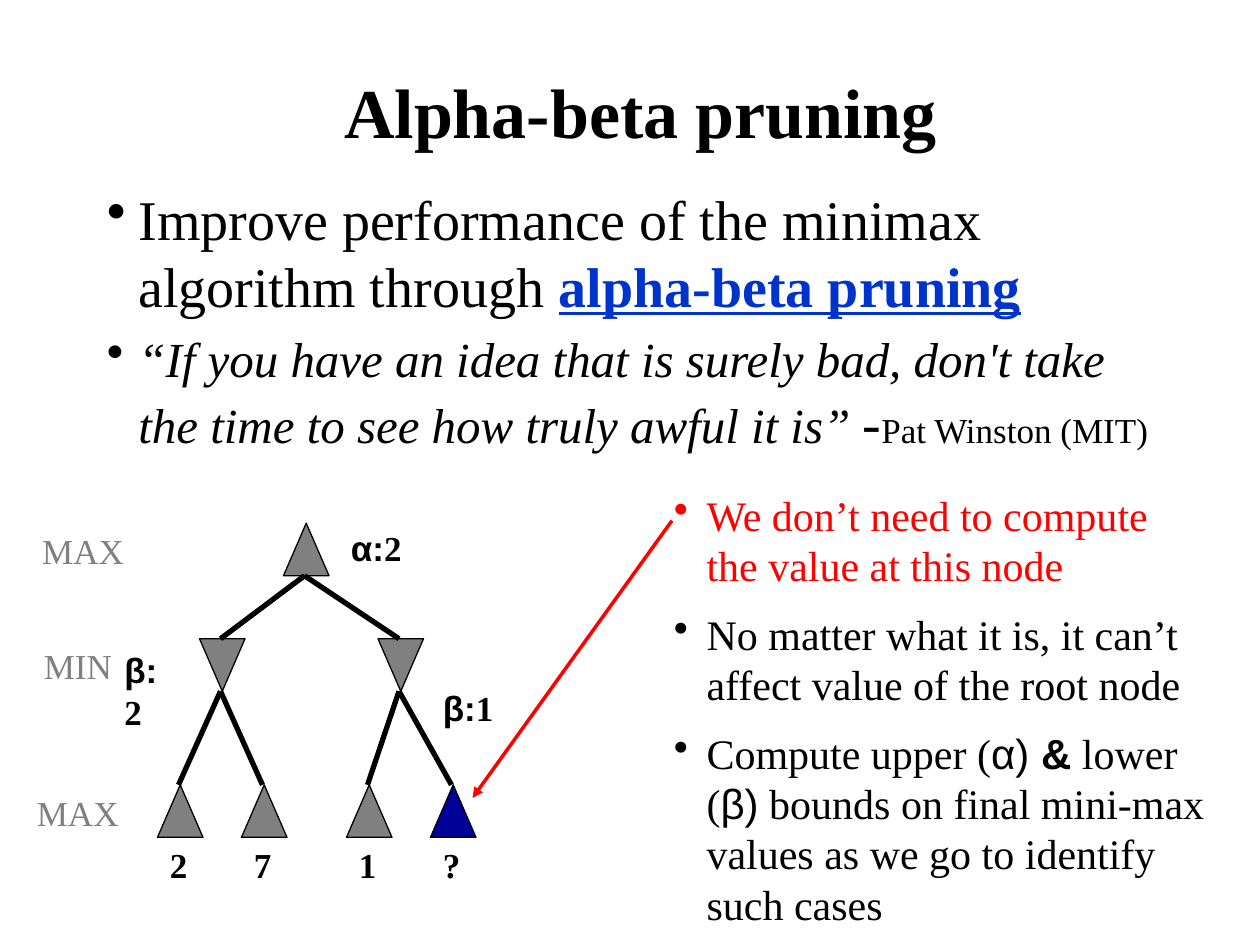
from lxml.etree import SubElement
from pptx import Presentation
from pptx.dml.color import RGBColor as RGB
from pptx.enum.shapes import MSO_CONNECTOR as CONN, MSO_SHAPE as SHAPE
from pptx.enum.text import MSO_ANCHOR as ANCHOR, PP_ALIGN as ALIGN
from pptx.oxml.ns import qn
from pptx.util import Pt

THEME = dict(
    serif="Times New Roman", sans="Arial",
    black="000000", gray="808080", navy="000099", blue="0033CC", red="FF0000",
    title=40, body=32, quote=28, note=24, label=20,
)
T = THEME

# Content: a paragraph is a list of (text, format) runs
TITLE = [[("Alpha-beta pruning", dict(bold=True))]]
BODY = [
    [("Improve performance of the minimax algorithm through ", {}),
     ("alpha-beta pruning", dict(color=T["blue"], bold=True, underline=True))],
    [("“If you have an idea that is surely bad, don't take the time to see "
      "how truly awful it is” ", dict(size=T["quote"], italic=True)),
     ("-", {}),
     ("Pat Winston (MIT)", dict(size=T["label"]))],
]
SANS = dict(font=T["sans"])
NOTES = [
    [("We don’t need to compute the value at this node", dict(color=T["red"]))],
    [("No matter what it is, it can’t affect value of the root node", {})],
    [("Compute upper (", {}), ("α) ", SANS), ("&", dict(SANS, bold=True)),
     (" lower (", {}), ("β)", SANS),
     (" bounds on final mini-max values as we go to identify such cases", {})],
]

# Tree: name -> (left, level, parent, value under a leaf)
NODES = {
    "root": (162, 0, None, None),
    "left": (114, 1, "root", None),
    "right": (216, 1, "root", None),
    "a": (90, 2, "left", "2"),
    "b": (138, 2, "left", "7"),
    "c": (198, 2, "right", "1"),
    "d": (246, 2, "right", "?"),
}
LEVEL_TOP = (299, 365, 448.5)
NODE_W, NODE_H, EDGE_X = 26, 30, 12
PRUNED = "d"
# Bounds: symbol, value, left, top, width, wraps
BOUNDS = [("α:", "2", 193.5, 297.5, 50, False),
          ("β:", "2", 64, 367, 41, True),
          ("β:", "1", 246, 389, 47, False)]
# Level names: text, left, top
LEVELS = [("MAX", 17, 299), ("MIN", 18, 365), ("MAX", 14, 448.5)]


def add_text(shapes, box, paras, size, color=T["black"], bold=False, wrap=True,
             align=ALIGN.LEFT, anchor=ANCHOR.TOP, indent=0, before=()):
    """Add a text box; indent turns on bullets, before gives paragraph gaps."""
    tf = shapes.add_textbox(*map(Pt, box)).text_frame
    tf.word_wrap, tf.vertical_anchor = wrap, anchor
    for i, runs in enumerate(paras):
        p = tf.paragraphs[0] if i == 0 else tf.add_paragraph()
        p.alignment = align
        if before:
            p.space_before = Pt(before[i])
        if indent:
            pPr = p._p.get_or_add_pPr()
            pPr.set("marL", str(Pt(indent)))
            pPr.set("indent", str(-Pt(indent)))
            SubElement(pPr, qn("a:buChar")).set("char", "•")
        for text, fmt in runs:
            r = p.add_run()
            r.text = text
            f = r.font
            f.name = fmt.get("font", T["serif"])
            f.size = Pt(fmt.get("size", size))
            f.color.rgb = RGB.from_string(fmt.get("color", color))
            f.bold = fmt.get("bold", bold)
            f.italic = fmt.get("italic", False)
            f.underline = fmt.get("underline", False)


def add_line(shapes, start, end, color, width, arrow=False):
    line = shapes.add_connector(CONN.STRAIGHT, *map(Pt, start + end))
    line.line.color.rgb = RGB.from_string(color)
    line.line.width = Pt(width)
    if arrow:
        SubElement(line.line._get_or_add_ln(), qn("a:tailEnd")).set("type", "triangle")
    SubElement(line._element.spPr, qn("a:effectLst"))


def add_node(shapes, left, level, color):
    sp = shapes.add_shape(SHAPE.ISOSCELES_TRIANGLE, Pt(left), Pt(LEVEL_TOP[level]),
                          Pt(NODE_W), Pt(NODE_H))
    sp.shadow.inherit = False
    sp.fill.solid()
    sp.fill.fore_color.rgb = RGB.from_string(color)
    sp.line.color.rgb = RGB.from_string(T["black"])
    sp.line.width = Pt(0.75)
    if level == 1:  # MIN nodes point down
        sp.rotation = 180


def add_tree(shapes):
    for name, (left, level, _, _) in NODES.items():
        add_node(shapes, left, level, T["navy"] if name == PRUNED else T["gray"])
    for left, level, parent, value in NODES.values():
        if parent:
            p_left, p_level = NODES[parent][:2]
            add_line(shapes, (left + EDGE_X, LEVEL_TOP[level]),
                     (p_left + EDGE_X, LEVEL_TOP[p_level] + NODE_H), T["black"], 3)
        if value:
            add_text(shapes, (left, LEVEL_TOP[level] + NODE_H, 24.5, 31),
                     [[(value, {})]], T["label"], bold=True, wrap=False)
    for symbol, value, left, top, width, wrap in BOUNDS:
        add_text(shapes, (left, top, width, 32), [[(symbol, SANS), (value, {})]],
                 T["label"], bold=True, wrap=wrap)


def main():
    prs = Presentation()
    prs.slide_width, prs.slide_height = Pt(720), Pt(540)
    shapes = prs.slides.add_slide(prs.slide_layouts[6]).shapes

    # Heading and main points
    add_text(shapes, (60, 18, 612, 90), TITLE, T["title"],
             align=ALIGN.CENTER, anchor=ANCHOR.MIDDLE)
    add_text(shapes, (54, 102, 612, 324), BODY, T["body"], indent=18, before=(6.4, 5.6))

    # Game tree with level names
    add_tree(shapes.add_group_shape().shapes)
    for text, left, top in LEVELS:
        add_text(shapes, (left, top, 61, 31), [[(text, {})]], T["label"],
                 color=T["gray"], wrap=False)

    # Notes and the arrow to the pruned node
    add_text(shapes, (378, 276, 318, 269), NOTES, T["note"], indent=18.7,
             before=(10.4,) * len(NOTES))
    add_line(shapes, (384, 297.5), (270, 456), T["red"], 2, arrow=True)

    prs.save("out.pptx")


if __name__ == "__main__":
    main()
